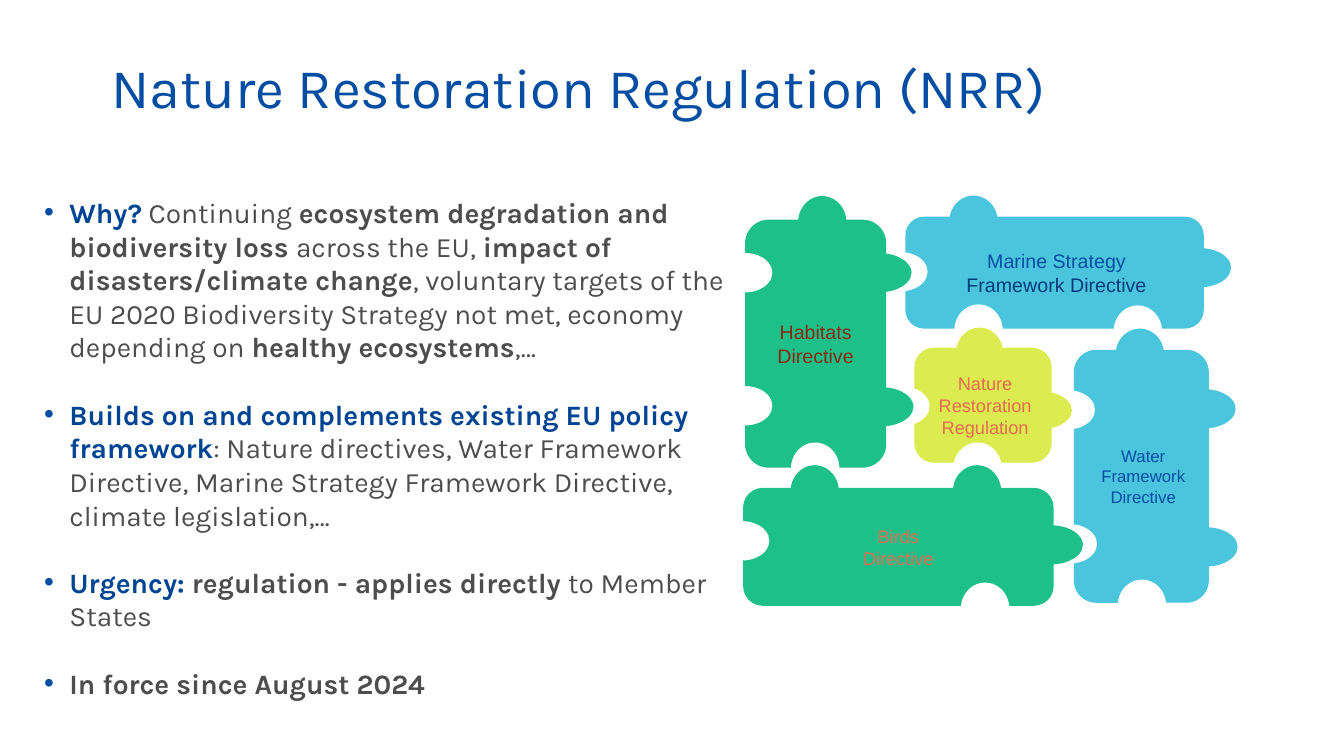
"""Build the Nature Restoration Regulation slide with its policy puzzle."""
from lxml.etree import SubElement
from pptx import Presentation
from pptx.dml.color import RGBColor as RGB
from pptx.enum.shapes import MSO_SHAPE as SHAPE
from pptx.enum.text import MSO_ANCHOR as ANCHOR, PP_ALIGN as ALIGN
from pptx.oxml.ns import qn
from pptx.util import Inches, Pt

BLUE = RGB(0x03, 0x4E, 0xA2)
DEEP = RGB(0x00, 0x44, 0x94)
NAVY = RGB(0x02, 0x3A, 0x7A)
GREY = RGB(0x4D, 0x4D, 0x4D)
WHITE = RGB(0xFF, 0xFF, 0xFF)
SKY = RGB(0x4B, 0xC5, 0xDE)
GREEN = RGB(0x1E, 0xC0, 0x8A)
LIME = RGB(0xDC, 0xEB, 0x4F)
CORAL = RGB(0xE7, 0x6C, 0x53)
RUST = RGB(0x8A, 0x27, 0x13)
CELL = Inches(0.1)

deck = Presentation()
deck.slide_width, deck.slide_height = Inches(13.33), Inches(7.5)
slide = deck.slides.add_slide(deck.slide_layouts[6])
group = slide.shapes.add_group_shape()


def grid(*cells):
    """Turn grid cells into lengths."""
    return [int(n * CELL) for n in cells]


def block(kind, box, fill):
    """Add one plain filled shape to the puzzle."""
    shape = group.shapes.add_shape(kind, *grid(*box))
    shape.shadow.inherit = False
    shape.fill.solid()
    shape.fill.fore_color.rgb = fill
    shape.line.fill.background()
    return shape


title = slide.shapes.add_textbox(*grid(10.1, 3.4, 117.3, 8.6)).text_frame
title.word_wrap = True
title.vertical_anchor = ANCHOR.BOTTOM
title.margin_bottom = 0
title.text = "Nature Restoration Regulation (NRR)"
head = title.paragraphs[0]
head.line_spacing = 0.9
head.font.name, head.font.size = "Karla", Pt(40)
head.font.color.rgb = BLUE

points = [
    [("Why?", DEEP, True), (" Continuing ", GREY, False),
     ("ecosystem degradation and biodiversity loss ", GREY, True),
     ("across the EU, ", GREY, False),
     ("impact of disasters/climate change", GREY, True),
     (", voluntary targets of the EU 2020 Biodiversity Strategy not met, "
      "economy depending on ", GREY, False),
     ("healthy ecosystems", GREY, True), (",…", GREY, False)],
    [("Builds on and complements existing EU policy framework", DEEP, True),
     (": Nature directives, Water Framework Directive, Marine Strategy "
      "Framework Directive, climate legislation,…", GREY, False)],
    [("Urgency: ", DEEP, True),
     ("regulation - applies directly ", GREY, True),
     ("to Member States", GREY, False)],
    [("In force since August 2024", GREY, True)],
]
body = slide.shapes.add_textbox(*grid(3.4, 18.9, 71.3, 50.1)).text_frame
body.word_wrap = True
for i, point in enumerate(points):
    para = body.add_paragraph() if i else body.paragraphs[0]
    if i:
        para.space_before = Pt(24)
    props = para._p.get_or_add_pPr()
    props.set("marL", str(Inches(0.25)))
    props.set("indent", str(-Inches(0.25)))
    tint = SubElement(props, qn("a:buClr"))
    SubElement(tint, qn("a:srgbClr")).set("val", str(BLUE))
    SubElement(props, qn("a:buFont")).set("typeface", "Arial")
    SubElement(props, qn("a:buChar")).set("char", "•")
    for words, ink, bold in point:
        run = para.add_run()
        run.text = words
        run.font.name, run.font.size = "Karla", Pt(20)
        run.font.bold = bold
        run.font.color.rgb = ink

pieces = [
    ((106.5, 34.7, 13.4, 25.1), SKY, 12, 0.04,
     [("Water Framework Directive", BLUE)]),
    ((89.8, 21.5, 29.6, 11.1), SKY, 14, 0.04,
     [("Marine Strategy", BLUE), ("Framework Directive", NAVY)]),
    ((90.7, 34.5, 13.6, 11.4), LIME, 13, 0.04,
     [("Nature Restoration Regulation", CORAL)]),
    ((73.9, 21.8, 14, 24.6), GREEN, 14, 0,
     [("Habitats Directive", RUST)]),
    ((73.7, 48.4, 30.8, 11.7), GREEN, 13, 0,
     [("Birds", CORAL), ("Directive", CORAL)]),
]
for box, fill, size, pad, lines in pieces:
    frame = block(SHAPE.ROUNDED_RECTANGLE, box, fill).text_frame
    frame.word_wrap = True
    frame.vertical_anchor = ANCHOR.MIDDLE
    frame.text = "\n".join(words for words, ink in lines)
    for para, (words, ink) in zip(frame.paragraphs, lines):
        para.alignment = ALIGN.CENTER
        para._p.get_or_add_pPr().set("marL", str(Inches(pad)))
        font = para.runs[0].font
        font.name, font.size = "Arial", Pt(size)
        font.color.rgb = ink

tabs = [
    (WHITE, 180, 5.4, 3.9, [(105.9, 40.65), (106.1, 53.95), (89.3, 26.95),
                            (89.5, 40.3), (73.9, 40.25), (73.9, 27.05),
                            (73.6, 53.65)]),
    (WHITE, 90, 5.1, 4.8, [(113.25, 60.05), (97.05, 32.75), (112.85, 32.85),
                           (96.95, 46.45), (80.85, 46.45), (97.7, 60.35)]),
    (SKY, 180, 6.3, 3.9, [(119.4, 40.55), (119.6, 54.25), (118.95, 26.55)]),
    (SKY, 90, 5.1, 4.8, [(96.55, 21.95), (113.05, 35.15)]),
    (LIME, 180, 6.3, 3.8, [(103.15, 40.7)]),
    (LIME, 90, 5.1, 4.7, [(97.15, 35.05)]),
    (GREEN, 180, 6.5, 3.9, [(87.35, 40.35), (87.15, 27.05), (104.15, 54.05)]),
    (GREEN, 90, 5.2, 4.8, [(81.55, 22.05), (96.9, 48.75), (80.8, 48.75)]),
]
for fill, turn, wide, high, spots in tabs:
    for x, y in spots:
        tab = block(SHAPE.PIE, (x - wide / 2, y - high / 2, wide, high), fill)
        tab.adjustments[0], tab.adjustments[1] = 53.51, 162
        tab.rotation = turn

deck.save("out.pptx")
